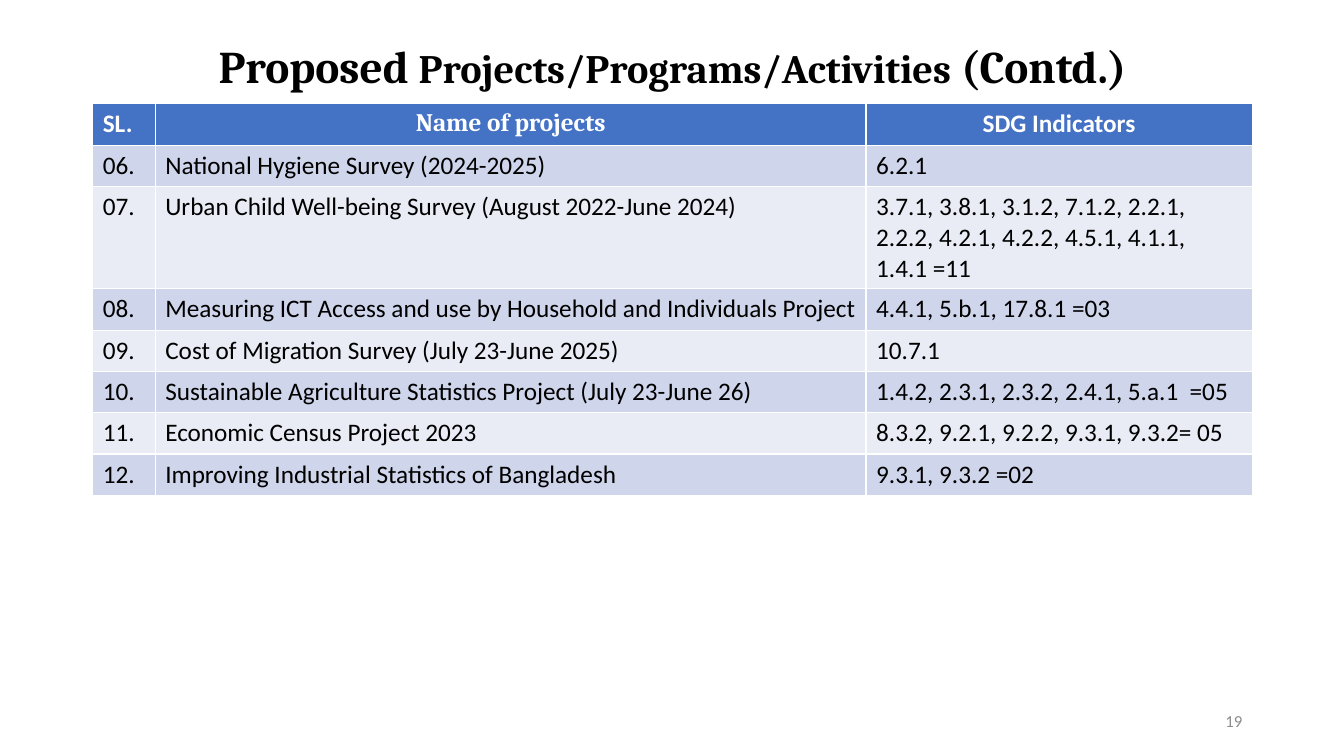
import pptx
import pptx.util
import pptx.dml.color
import pptx.enum.text

Inches = pptx.util.Inches
Pt = pptx.util.Pt
RGBColor = pptx.dml.color.RGBColor
PP_ALIGN = pptx.enum.text.PP_ALIGN
MSO_ANCHOR = pptx.enum.text.MSO_ANCHOR
MSO_AUTO_SIZE = pptx.enum.text.MSO_AUTO_SIZE

BLACK = RGBColor(0x00, 0x00, 0x00)
WHITE = RGBColor(0xFF, 0xFF, 0xFF)
GREY = RGBColor(0x8C, 0x8C, 0x8C)
HEADER_BLUE = RGBColor(0x44, 0x72, 0xC4)
BAND_DARK = RGBColor(0xCF, 0xD5, 0xEA)
BAND_LIGHT = RGBColor(0xE9, 0xEB, 0xF5)

LEFT, WIDTH = 0.92, 11.5
ROW_HEIGHT = 0.41
COLUMN_WIDTHS = [0.62, 7.05, 3.83]

TITLE_RUNS = [
    ("Proposed ", 32.4),
    ("Projects/Programs/Activities", 28.8),
    (" (Contd.)", 32.4),
]
HEADERS = [
    ("SL.", "Calibri", PP_ALIGN.LEFT),
    ("Name of projects", "Cambria", PP_ALIGN.CENTER),
    ("SDG Indicators", "Calibri", PP_ALIGN.CENTER),
]
PROJECTS = [
    ("06.", "National Hygiene Survey (2024-2025)", "6.2.1"),
    ("07.", "Urban Child Well-being Survey (August 2022-June 2024)",
     "3.7.1, 3.8.1, 3.1.2, 7.1.2, 2.2.1, 2.2.2, 4.2.1, 4.2.2, 4.5.1, 4.1.1, 1.4.1 =11"),
    ("08.", "Measuring ICT Access and use by Household and Individuals Project",
     "4.4.1, 5.b.1, 17.8.1 =03"),
    ("09.", "Cost of Migration Survey (July 23-June 2025)", "10.7.1"),
    ("10.", "Sustainable Agriculture Statistics Project (July 23-June 26)",
     "1.4.2, 2.3.1, 2.3.2, 2.4.1, 5.a.1  =05"),
    ("11.", "Economic Census Project 2023", "8.3.2, 9.2.1, 9.2.2, 9.3.1, 9.3.2= 05"),
    ("12.", "Improving Industrial Statistics of Bangladesh", "9.3.1, 9.3.2 =02"),
]


def add_run(p, text, size, color, font="Calibri", bold=False):
    r = p.add_run()
    r.text = text
    r.font.size = Pt(size)
    r.font.name = font
    r.font.bold = bold
    r.font.color.rgb = color


def format_title(s):
    sp = s.shapes.title
    sp.left, sp.top = Inches(LEFT), Inches(0.4)
    sp.width, sp.height = Inches(WIDTH), Inches(0.57)
    tf = sp.text_frame
    tf.word_wrap = True
    tf.auto_size = MSO_AUTO_SIZE.NONE
    tf.vertical_anchor = MSO_ANCHOR.MIDDLE
    p = tf.paragraphs[0]
    p.alignment = PP_ALIGN.CENTER
    p.line_spacing = 0.9
    for text, size in TITLE_RUNS:
        add_run(p, text, size, BLACK, "Cambria", True)


def fill_cell(cell, text, fill, color, font="Calibri", align=PP_ALIGN.LEFT, bold=False):
    cell.fill.solid()
    cell.fill.fore_color.rgb = fill
    p = cell.text_frame.paragraphs[0]
    p.alignment = align
    add_run(p, text, 18, color, font, bold)


def add_project_table(s):
    row_count = len(PROJECTS) + 1
    table = s.shapes.add_table(
        row_count, len(HEADERS), Inches(LEFT), Inches(1.03),
        Inches(WIDTH), Inches(ROW_HEIGHT * row_count)).table
    for column, width in zip(table.columns, COLUMN_WIDTHS):
        column.width = Inches(width)
    for row in table.rows:
        row.height = Inches(ROW_HEIGHT)
    for j, (text, font, align) in enumerate(HEADERS):
        fill_cell(table.cell(0, j), text, HEADER_BLUE, WHITE, font, align, True)
    for i, project in enumerate(PROJECTS, 1):
        band = BAND_DARK if i % 2 else BAND_LIGHT
        for j, text in enumerate(project):
            fill_cell(table.cell(i, j), text, band, BLACK)


def add_page_number(s, number):
    sp = s.shapes.add_textbox(Inches(9.42), Inches(6.95), Inches(3), Inches(0.4))
    tf = sp.text_frame
    tf.word_wrap = True
    tf.vertical_anchor = MSO_ANCHOR.MIDDLE
    p = tf.paragraphs[0]
    p.alignment = PP_ALIGN.RIGHT
    add_run(p, number, 12, GREY)


def main():
    prs = pptx.Presentation()
    prs.slide_width, prs.slide_height = Inches(13.33), Inches(7.5)
    s = prs.slides.add_slide(prs.slide_layouts[5])
    format_title(s)
    add_project_table(s)
    add_page_number(s, "19")
    prs.save("out.pptx")


if __name__ == "__main__":
    main()
